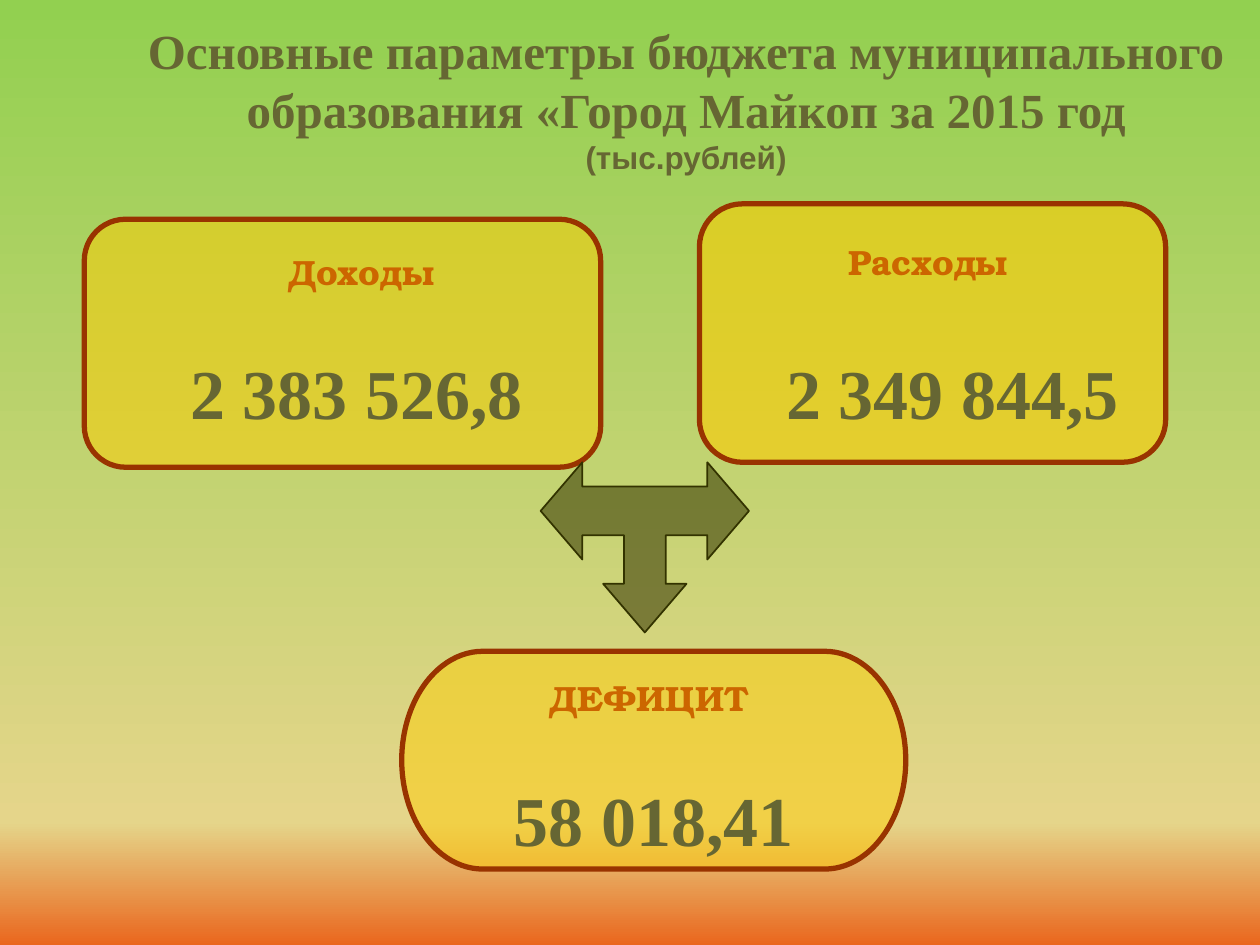
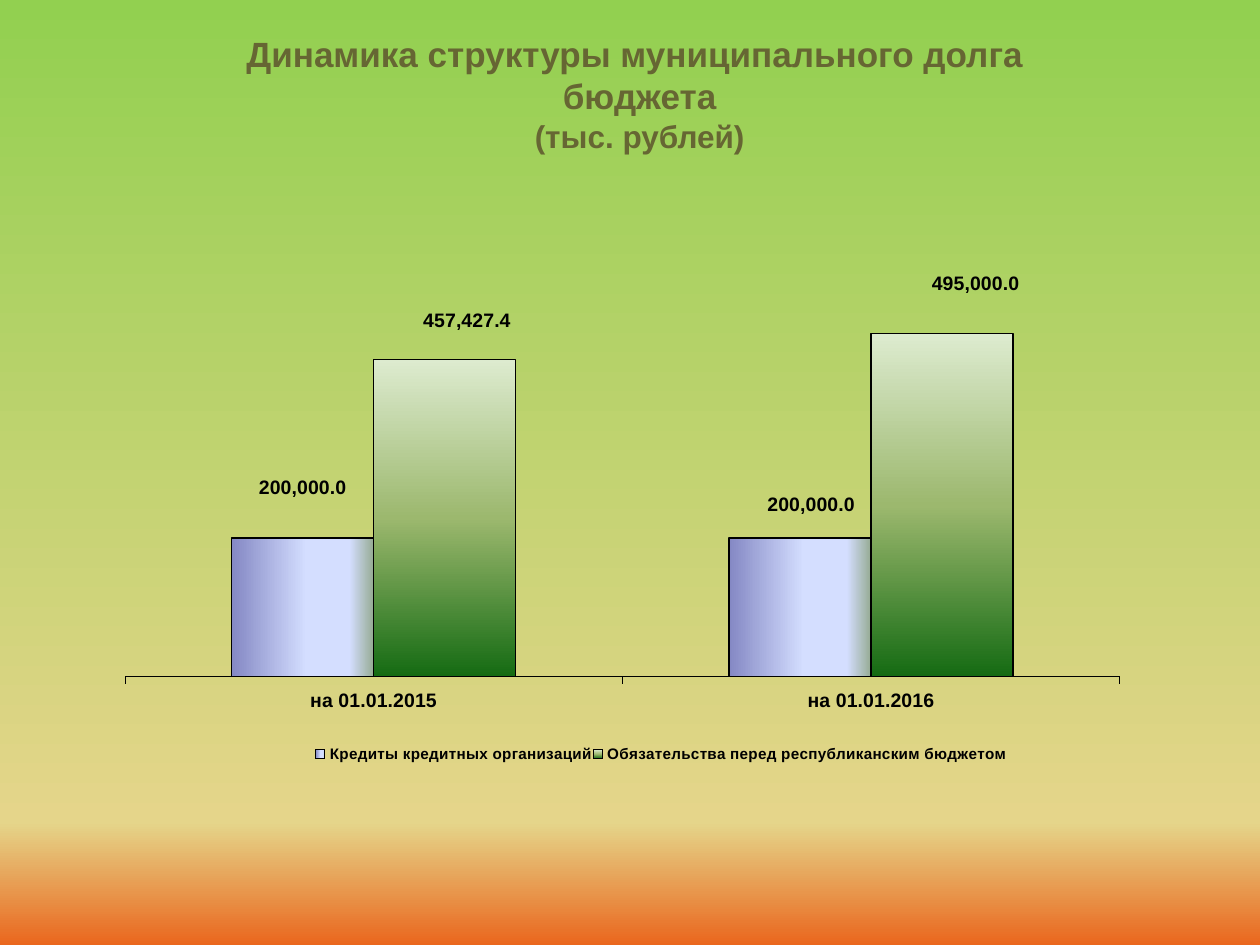
from lxml import etree
from pptx import Presentation
from pptx.chart.data import CategoryChartData
from pptx.dml.color import RGBColor
from pptx.enum.chart import (XL_CHART_TYPE, XL_LABEL_POSITION, XL_LEGEND_POSITION,
                             XL_TICK_LABEL_POSITION, XL_TICK_MARK)
from pptx.enum.shapes import MSO_SHAPE
from pptx.enum.text import MSO_ANCHOR, MSO_AUTO_SIZE, PP_ALIGN
from pptx.oxml.ns import qn
from pptx.util import Cm, Pt

CENTER = PP_ALIGN.CENTER
ROUNDED = MSO_SHAPE.ROUNDED_RECTANGLE
TERMINATOR = MSO_SHAPE.FLOWCHART_TERMINATOR

OLIVE = "666633"
DARK_OLIVE = "333300"
GOLD = "FFCC00"
BROWN = "993300"
ORANGE = "CC6600"
BLACK = "000000"
SANS = "Arial"
SERIF = "Times New Roman"
DISPLAY = "TeX Gyre Bonum"
NUMBER_FORMAT = "#,##0.0"
BACKGROUND = [(0, "92D050"), (87, "E5D58A"), (100, "EA671E")]


def paint(fill, colour, element=None, opacity=None, angle=0):
    """Fill with one hex colour, or with a gradient given as (percent, hex) stops.

    The element that holds the fill is needed for gradients and for opacity.
    """
    if isinstance(colour, str):
        fill.solid()
        fill.fore_color.rgb = RGBColor.from_string(colour)
        if opacity is not None:
            solid = element.find(".//" + qn("a:solidFill"))
            etree.SubElement(solid[0], qn("a:alpha"), val=str(opacity * 1000))
        return
    fill.gradient()
    fill.gradient_angle = angle
    stop_list = element.find(".//" + qn("a:gsLst"))
    stop_list.clear()
    for percent, hex_value in colour:
        stop = etree.SubElement(stop_list, qn("a:gs"), pos=str(percent * 1000))
        etree.SubElement(stop, qn("a:srgbClr"), val=hex_value)


def write(paragraph, text, size, font=SANS, colour=OLIVE):
    """Add a bold run to a centred paragraph."""
    paragraph.alignment = CENTER
    run = paragraph.add_run()
    run.text = text
    run.font.size = Pt(size)
    run.font.name = font
    run.font.bold = True
    paint(run.font.fill, colour)


presentation = Presentation()
presentation.slide_width = Cm(25.4)
presentation.slide_height = Cm(19.05)
master = presentation.slide_master
paint(master.background.fill, BACKGROUND, master.element, angle=270)

# Titles of both slides: place, anchor, then lines of (text, size, font)
titles = [
    ((2.69, 0.62, 22.28, 2.72), MSO_ANCHOR.MIDDLE, [
        ("Основные параметры бюджета муниципального образования «Город Майкоп за 2015 год",
         28, SERIF),
        ("(тыс.рублей)", 18, SANS)]),
    ((1.3, 0.53, 23.19, 2.74), MSO_ANCHOR.TOP, [
        ("Динамика структуры муниципального долга ", 20, SANS),
        ("бюджета", 20, SANS),
        ("(тыс. рублей)", 18, SANS)]),
]
slides = []
for place, anchor, lines in titles:
    slide = presentation.slides.add_slide(presentation.slide_layouts[5])
    title = slide.shapes.title
    title.left, title.top, title.width, title.height = map(Cm, place)
    frame = title.text_frame
    frame.auto_size = MSO_AUTO_SIZE.NONE
    frame.vertical_anchor = anchor
    for number, (text, size, font) in enumerate(lines):
        paragraph = frame.add_paragraph() if number else frame.paragraphs[0]
        paragraph.space_before = Pt(0)
        write(paragraph, text, size, font)
    slides.append(slide)
budget_slide, debt_slide = slides

# Slide 1: income and expenses lead to the deficit
panels = [
    (ROUNDED, (1.7, 4.42, 10.41, 5), 51),
    (ROUNDED, (14.1, 4.11, 9.4, 5.21), 58),
    (TERMINATOR, (8.1, 13.13, 10.16, 4.39), 48),
]
for preset, place, opacity in panels:
    panel = budget_slide.shapes.add_shape(preset, *map(Cm, place))
    panel.shadow.inherit = False
    paint(panel.fill, GOLD, panel.element, opacity)
    paint(panel.line.fill, BROWN)
    panel.line.width = Pt(3)

# The three-way arrow lies on a grid of 10 by 7 units; its left half is mirrored
left_half = [(5, 7), (3, 5), (4, 5), (4, 3), (2, 3), (2, 4), (0, 2), (2, 0), (2, 1)]
right_half = [(10 - x, y) for x, y in reversed(left_half[1:])]
outline = left_half + right_half
builder = budget_slide.shapes.build_freeform(*outline[0], scale=(Cm(0.42), Cm(0.49)))
builder.add_line_segments(outline[1:], close=True)
arrow = builder.convert_to_shape(Cm(10.9), Cm(9.32))
arrow.shadow.inherit = False
paint(arrow.fill, DARK_OLIVE, arrow.element, 55)
paint(arrow.line.fill, DARK_OLIVE)
arrow.line.width = Pt(1)

heading_format = dict(size=20, font=DISPLAY, colour=ORANGE)
amount_format = dict(size=40, font=SERIF, colour=OLIVE)
captions = [
    ("Доходы", (3.89, 4.93, 6.78, 1.6), heading_format),
    ("ДЕФИЦИТ", (9.7, 13.52, 6.78, 2.59), heading_format),
    ("Расходы", (14.91, 4.72, 7.59, 1.6), heading_format),
    ("2 383 526,8", (3.49, 6.93, 7.4, 2), amount_format),
    ("58 018,41", (10.08, 15.52, 6.2, 1.8), amount_format),
    ("2 349 844,5", (15.5, 6.93, 7.4, 2), amount_format),
]
for text, place, text_format in captions:
    caption = budget_slide.shapes.add_textbox(*map(Cm, place))
    caption.text_frame.word_wrap = False
    write(caption.text_frame.paragraphs[0], text, **text_format)

# Slide 2: municipal debt chart
chart_data = CategoryChartData(number_format=NUMBER_FORMAT)
chart_data.categories = ["на 01.01.2015", "на 01.01.2016"]
chart_data.add_series("Кредиты кредитных организаций", [200000, 200000])
chart_data.add_series("Обязательства перед республиканским бюджетом", [457427.4, 495000])
chart = debt_slide.shapes.add_chart(
    XL_CHART_TYPE.COLUMN_CLUSTERED, *map(Cm, (2.07, 4.1, 22.53, 11.63)), chart_data).chart
chart.has_title = False
chart.has_legend = True
chart.legend.position = XL_LEGEND_POSITION.RIGHT
chart.legend.include_in_layout = False

value_axis = chart.value_axis
value_axis.minimum_scale = 0
value_axis.maximum_scale = 600000
value_axis.has_major_gridlines = False
value_axis.visible = False

category_axis = chart.category_axis
category_axis.major_tick_mark = XL_TICK_MARK.OUTSIDE
category_axis.tick_label_position = XL_TICK_LABEL_POSITION.LOW
category_axis.format.line.width = Pt(0.19)
paint(category_axis.format.line.fill, BLACK)

plot = chart.plots[0]
plot.gap_width = 150
plot.overlap = 0
plot.vary_by_categories = False
fonts = [(chart.font, 8.3), (chart.legend.font, 8.7), (category_axis.tick_labels.font, 11.1)]

series_gradients = [
    ([(0, "8488C4"), (53, "D4DEFF"), (83, "D4DEFF"), (100, "96AB94")], 0),
    ([(0, "DDEBCF"), (50, "9CB86E"), (100, "156B13")], 270),
]
for series, (stops, angle) in zip(plot.series, series_gradients):
    paint(series.format.fill, stops, series._element, angle=angle)
    paint(series.format.line.fill, BLACK)
    series.format.line.width = Pt(0.75)
    labels = series.data_labels
    labels.show_value = True
    labels.number_format = NUMBER_FORMAT
    labels.number_format_is_linked = False
    fonts.append((labels.font, 11.1))
    for index in range(2):
        label = series.points[index].data_label
        label.position = XL_LABEL_POSITION.OUTSIDE_END
        fonts.append((label.font, 11.1))

for leader_lines in chart.element.iter(qn("c:showLeaderLines")):
    leader_lines.set("val", "0")

for font, size in fonts:
    font.name = SANS
    font.size = Pt(size)
    font.bold = True
    paint(font.fill, BLACK)

# Manual layouts as fractions of the chart; labels are shifted from their default place
edges = dict(xMode="edge", yMode="edge")
layouts = [
    (chart.element.find(".//" + qn("c:plotArea")), 0,
     dict(layoutTarget="inner", **edges, x=0.02, y=0.1, w=0.89, h=0.72)),
    (chart.element.find(".//" + qn("c:legend")), 1,
     dict(**edges, x=0.19, y=0.93, w=0.62, h=0.05)),
]
label_shifts = [(0, -0.06), (0.01, -0.03), (0.02, -0.04), (0.03, -0.06)]
for label, (x, y) in zip(chart.element.iter(qn("c:dLbl")), label_shifts):
    layouts.append((label, 1, dict(x=x, y=y)))
for host, position, settings in layouts:
    for default_layout in host.findall(qn("c:layout")):
        host.remove(default_layout)
    layout = etree.Element(qn("c:layout"))
    manual = etree.SubElement(layout, qn("c:manualLayout"))
    for name, value in settings.items():
        etree.SubElement(manual, qn("c:" + name), val=str(value))
    host.insert(position, layout)

presentation.save("out.pptx")
